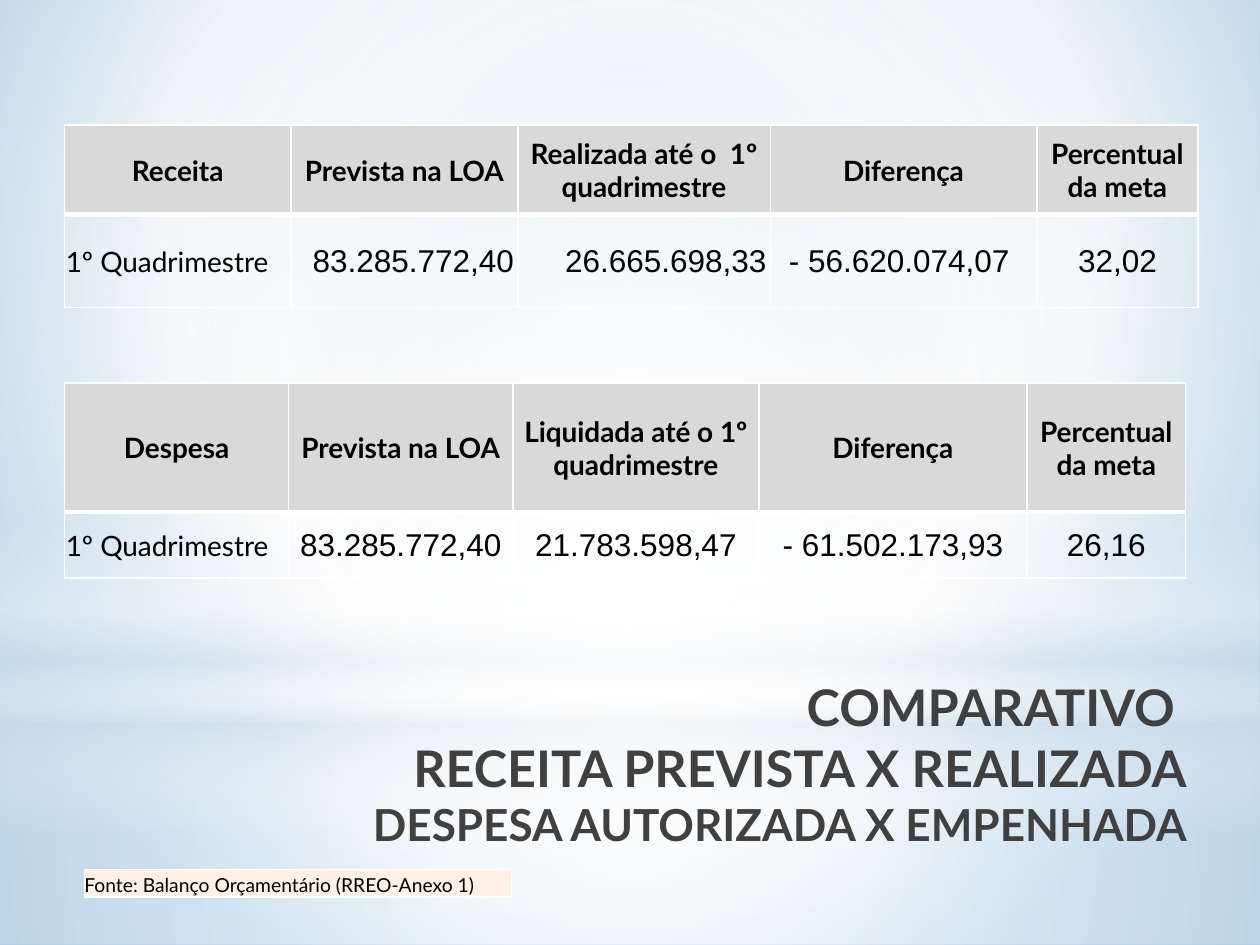
"""Build the slide comparing planned and actual revenue and spending."""
from lxml.etree import SubElement
from pptx import Presentation
from pptx.dml.color import RGBColor
from pptx.enum.shapes import MSO_SHAPE
from pptx.enum.text import MSO_ANCHOR, PP_ALIGN
from pptx.oxml.ns import qn
from pptx.util import Pt

HUES = {"white": "FFFFFF", "mist": "CCDDEA", "sky": "BCD5E8", "blue": "82B6DE",
        "gray": "D9D9D9", "peach": "FFF0E8", "black": "000000", "dark": "404040"}


def shade(home, stops, rect=None):
    old = home.find(qn("a:solidFill"))
    grad = old.makeelement(qn("a:gradFill"), {"rotWithShape": "1"})
    home.replace(old, grad)
    items = SubElement(grad, qn("a:gsLst"))
    for spot, hue, alpha in stops:
        stop = SubElement(items, qn("a:gs"), pos=str(spot * 1000))
        tint = SubElement(stop, qn("a:srgbClr"), val=HUES[hue])
        SubElement(tint, qn("a:alpha"), val=str(alpha * 1000))
    if rect:
        track = SubElement(grad, qn("a:path"), path="circle")
        sides = {side: str(val * 1000) for side, val in zip("ltrb", rect)}
        SubElement(track, qn("a:fillToRect"), sides)
    else:
        SubElement(grad, qn("a:lin"), ang="5400000", scaled="0")


def fill_cell(cell, text, font, size, bold, align, anchor, hue, base, pads):
    cell.margin_left, cell.margin_top, cell.margin_right, cell.margin_bottom = map(Pt, pads)
    cell.vertical_anchor = anchor
    props = cell._tc.get_or_add_tcPr()
    for side, width in (("L", 1), ("R", 1), ("T", 1), ("B", base)):
        line = SubElement(props, qn("a:ln" + side), w=str(Pt(width)))
        SubElement(SubElement(line, qn("a:solidFill")), qn("a:srgbClr"), val=HUES["white"])
    if hue:
        cell.fill.solid()
        cell.fill.fore_color.rgb = RGBColor.from_string(HUES[hue])
    else:
        cell.fill.background()
    para = cell.text_frame.paragraphs[0]
    para.alignment = align
    run = para.add_run()
    run.text = text
    run.font.name, run.font.size, run.font.bold = font, Pt(size), bold
    run.font.color.rgb = RGBColor.from_string(HUES["black"])


deck = Presentation()
deck.slide_width, deck.slide_height = Pt(720), Pt(540)
slide = deck.slides.add_slide(deck.slide_layouts[6])
shapes = slide.shapes

slide.background.fill.solid()
shade(slide.background._cSld.bg.bgPr,
      [(0, "sky", 100), (60, "white", 100), (100, "blue", 100)], (20, 10, 20, 60))

MID = (50, 50, 50, 50)
layers = [
    (MSO_SHAPE.RECTANGLE, 401.8, 138.2, MID,
     [(0, "white", 91), (37, "white", 76), (100, "mist", 79)]),
    (MSO_SHAPE.RECTANGLE, 0, 401.8, MID,
     [(0, "white", 89), (48, "white", 62), (100, "mist", 79)]),
    (MSO_SHAPE.RECTANGLE, 296.6, 180, None,
     [(0, "white", 0), (29, "white", 30), (45, "mist", 40),
      (55, "white", 26), (65, "mist", 60), (100, "white", 0)]),
    (MSO_SHAPE.OVAL, 126, 401.8, MID, [(0, "white", 100), (56, "white", 0)]),
]
for kind, top, high, rect, stops in layers:
    glow = shapes.add_shape(kind, Pt(0), Pt(top), Pt(720), Pt(high))
    glow.shadow.inherit = False
    glow.line.fill.background()
    glow.fill.solid()
    shade(glow._element.spPr, stops, rect)

title = shapes.add_textbox(Pt(172.8), Pt(383), Pt(512.6), Pt(90)).text_frame
title.word_wrap = True
para = title.paragraphs[0]
para.alignment = PP_ALIGN.RIGHT
lines = [("COMPARATIVO ", 28.8), ("RECEITA PREVISTA X REALIZADA", 28.8),
         ("DESPESA AUTORIZADA X EMPENHADA", 25.2)]
for num, (text, size) in enumerate(lines):
    if num:
        para.add_line_break()
    run = para.add_run()
    run.text = text
    run.font.name, run.font.size, run.font.bold = "Lato", Pt(size), True
    run.font.color.rgb = RGBColor.from_string(HUES["dark"])

LEFT, MIDDLE, RIGHT = PP_ALIGN.LEFT, PP_ALIGN.CENTER, PP_ALIGN.RIGHT
head = ("Lato", 16, True, MIDDLE, MSO_ANCHOR.MIDDLE, "gray", 3, (0.7, 0.7, 0.7, 0))
label = ("Lato", 16, False, LEFT, MSO_ANCHOR.MIDDLE, None, 1, (0.7, 0.7, 0.7, 0))
value = ("Arial", 18, False, MIDDLE, MSO_ANCHOR.MIDDLE, None, 1, (0.7, 0.7, 0.7, 0))
flush = ("Arial", 18, False, RIGHT, MSO_ANCHOR.MIDDLE, None, 1, (0.7, 0.7, 2.2, 0))
note = ("Lato", 11, False, LEFT, MSO_ANCHOR.BOTTOM, "peach", 1, (0, 0, 0, 0))
tables = [
    (36.9, 71.4, [129.4, 129.6, 144.3, 152.3, 92.2], [51.1, 53.3],
     [["Receita", "Prevista na LOA", "Realizada até o  1º quadrimestre",
       "Diferença", "Percentual da meta"],
      ["1º Quadrimestre", "83.285.772,40", "26.665.698,33", "- 56.620.074,07 ", "32,02"]],
     [[head] * 5, [label, flush, flush, value, value]]),
    (48.2, 496.8, [244.1], [15.8],
     [["Fonte: Balanço Orçamentário (RREO-Anexo 1)"]], [[note]]),
    (36.9, 218.9, [128, 128.2, 140.6, 153.2, 90.6], [73.7, 37.6],
     [["Despesa", "Prevista na LOA", "Liquidada até o 1º quadrimestre",
       "Diferença", "Percentual da meta"],
      ["1º Quadrimestre", "83.285.772,40", "21.783.598,47", "- 61.502.173,93", "26,16"]],
     [[head] * 5, [label] + [value] * 4]),
]
for left, top, cols, rows, texts, looks in tables:
    table = shapes.add_table(len(rows), len(cols), Pt(left), Pt(top),
                             Pt(sum(cols)), Pt(sum(rows))).table
    table.first_row = table.horz_banding = False
    for col, wide in zip(table.columns, cols):
        col.width = Pt(wide)
    for row, high, words, styles in zip(table.rows, rows, texts, looks):
        row.height = Pt(high)
        for cell, text, look in zip(row.cells, words, styles):
            fill_cell(cell, text, *look)

deck.save("out.pptx")
